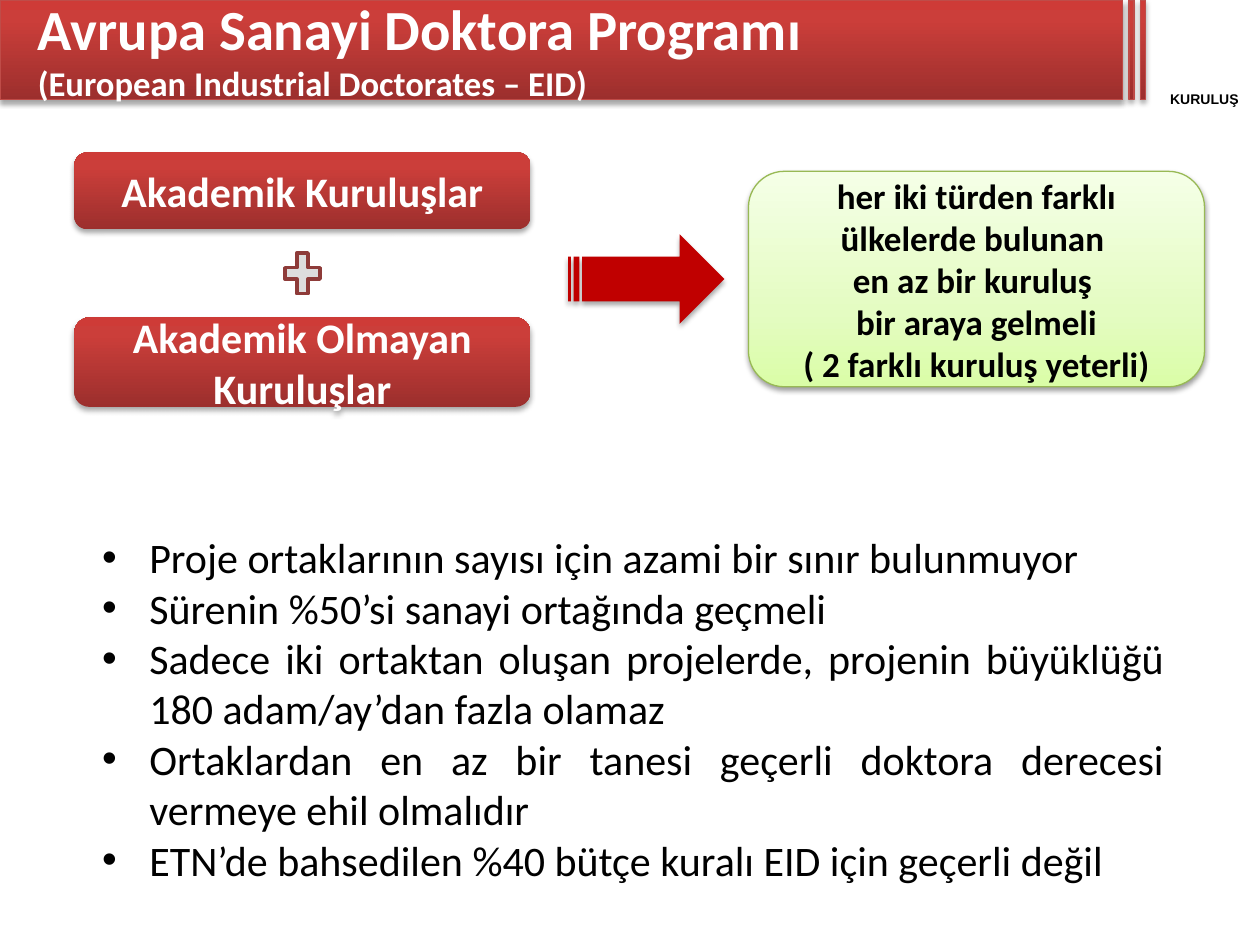
from lxml.etree import SubElement
from pptx import Presentation
from pptx.dml.color import RGBColor
from pptx.enum.shapes import MSO_SHAPE
from pptx.enum.text import MSO_ANCHOR, MSO_AUTO_SIZE, PP_ALIGN
from pptx.oxml import parse_xml
from pptx.oxml.ns import nsdecls, qn
from pptx.util import Pt

COLORS = {"white": "FFFFFF", "black": "000000", "header line": "BF4C48",
          "arrow": "C00000", "plus": "DDDDDD", "plus line": "8E3B39",
          "green line": "98B955"}
RED = [(0, "9C2F2D"), (80, "CB3E3A"), (100, "CE3B37")]
GREEN = [(0, "DAFDA7"), (35, "E4FCC2"), (100, "F5FFE7")]


def add_figure(preset, place, fill, line=None, line_width=0.75, shadow_opacity=0):
    """Add a shape; fill is a colour name or a list of gradient stops, bottom to top."""
    figure = slide.shapes.add_shape(preset, *map(Pt, place))
    if isinstance(fill, str):
        figure.fill.solid()
        figure.fill.fore_color.rgb = RGBColor.from_string(COLORS[fill])
    else:
        stops = "".join(f'<a:gs pos="{position * 1000}"><a:srgbClr val="{color}"/></a:gs>'
                        for position, color in fill)
        figure._element.spPr.find(qn("a:prstGeom")).addnext(parse_xml(
            f'<a:gradFill {nsdecls("a")} rotWithShape="1"><a:gsLst>{stops}</a:gsLst>'
            '<a:lin ang="16200000" scaled="0"/></a:gradFill>'))
    if line:
        figure.line.color.rgb = RGBColor.from_string(COLORS[line])
        figure.line.width = Pt(line_width)
    else:
        figure.line.fill.background()
    figure.shadow.inherit = False
    if shadow_opacity:
        effects = figure._element.spPr.find(qn("a:effectLst"))
        shadow = SubElement(effects, qn("a:outerShdw"), blurRad=str(Pt(3.1)),
                            dist=str(Pt(1.8)), dir="5400000", rotWithShape="0")
        color = SubElement(shadow, qn("a:srgbClr"), val=COLORS["black"])
        SubElement(color, qn("a:alpha"), val=str(shadow_opacity * 1000))
    return figure


def write_centred(box, lines, size, color, font="Calibri", insets=(17.28, 15.12)):
    frame = box.text_frame
    frame.word_wrap = True
    frame.vertical_anchor = MSO_ANCHOR.MIDDLE
    frame.margin_left = frame.margin_right = Pt(insets[0])
    frame.margin_top = frame.margin_bottom = Pt(insets[1])
    frame.text = "\n".join(lines)
    for para in frame.paragraphs:
        para.alignment = PP_ALIGN.CENTER
        para.font.name = font
        para.font.size = Pt(size)
        para.font.bold = True
        para.font.color.rgb = RGBColor.from_string(COLORS[color])


deck = Presentation()
deck.slide_width, deck.slide_height = Pt(720), Pt(540)
slide = deck.slides.add_slide(deck.slide_layouts[1])
title, body = slide.placeholders

# Header band with its two stripes, placed behind the title
for left, width in [(0, 641.5), (645.1, 2.9), (651.6, 2.9)]:
    band = add_figure(MSO_SHAPE.RECTANGLE, (left, 0, width, 56.9), RED,
                      "header line", shadow_opacity=35)
    title._element.addprevious(band._element)
label = slide.shapes.add_textbox(Pt(651.6), Pt(51.8), Pt(73.4), Pt(9.4))
write_centred(label, ["KURULUŞ"], 8, "black", "Arial", (0, 0))

title.left, title.top, title.width, title.height = Pt(14.4), Pt(0), Pt(629.3), Pt(55.4)
title.text_frame.auto_size = MSO_AUTO_SIZE.NONE
title.text_frame.vertical_anchor = MSO_ANCHOR.MIDDLE
heading = title.text_frame.paragraphs[0]
heading.alignment = PP_ALIGN.LEFT
heading.font.name = "Calibri"
heading.font.bold = True
heading.font.color.rgb = RGBColor.from_string(COLORS["white"])
span = heading.add_run()
span.text = "Avrupa Sanayi Doktora Programı "
span.font.size = Pt(32.4)
heading.add_line_break()
span = heading.add_run()
span.text = "(European Industrial Doctorates – EID)"
span.font.size = Pt(19.8)

body.left, body.top, body.width, body.height = Pt(51.1), Pt(300.2), Pt(621.4), Pt(211)
body.text_frame.auto_size = MSO_AUTO_SIZE.NONE
body.text_frame.text = "\n".join([
    "Proje ortaklarının sayısı için azami bir sınır bulunmuyor",
    "Sürenin %50’si sanayi ortağında geçmeli",
    "Sadece iki ortaktan oluşan projelerde, projenin büyüklüğü 180 adam/ay’dan fazla olamaz",
    "Ortaklardan en az bir tanesi geçerli doktora derecesi vermeye ehil olmalıdır",
    "ETN’de bahsedilen %40 bütçe kuralı EID için geçerli değil",
])
for para in body.text_frame.paragraphs:
    para.alignment = PP_ALIGN.JUSTIFY
    para.space_before = Pt(0)
    para.font.name = "Calibri"
    para.font.size = Pt(24)
    para.font.color.rgb = RGBColor.from_string(COLORS["black"])

# Two kinds of organisation lead to one requirement
add_figure(MSO_SHAPE.STRIPED_RIGHT_ARROW, (324.7, 133.9, 89.3, 51.1), "arrow",
           shadow_opacity=35)
for top, height, name in [(87.1, 43.9, "Akademik Kuruluşlar"),
                          (181.4, 51.1, "Akademik Olmayan Kuruluşlar")]:
    box = add_figure(MSO_SHAPE.ROUNDED_RECTANGLE, (42.5, top, 260.6, height), RED,
                     shadow_opacity=35)
    write_centred(box, [name], 24, "white")
add_figure(MSO_SHAPE.MATH_PLUS, (159.1, 140.4, 27.4, 31.7), "plus", "plus line", 2)
requirement = add_figure(MSO_SHAPE.ROUNDED_RECTANGLE, (427.7, 97.9, 260.6, 123.1), GREEN,
                         "green line", shadow_opacity=38)
write_centred(requirement, ["her iki türden farklı ülkelerde bulunan ", "en az bir kuruluş ",
                            "bir araya gelmeli", "( 2 farklı kuruluş yeterli)"], 20, "black")

deck.save("out.pptx")
